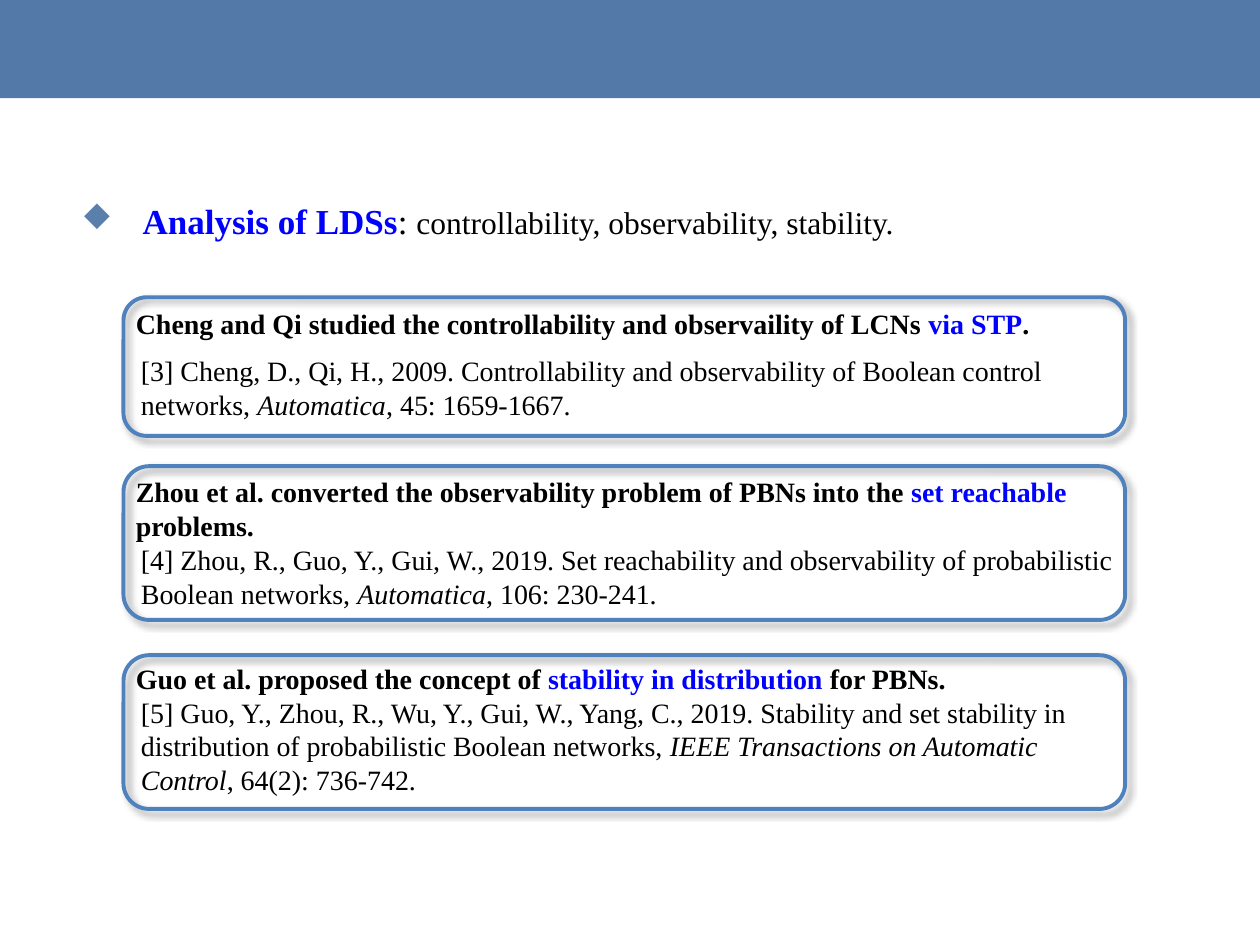
"""Build a slide on the analysis of logical dynamic systems with three framed citations."""
from lxml import etree
from pptx import Presentation, util as u
from pptx.dml.color import RGBColor
from pptx.enum import shapes, text
from pptx.oxml import parse_xml
from pptx.oxml.ns import nsdecls, qn

BAND = RGBColor(0x52, 0x79, 0xA7)
FRAME = RGBColor(0x4F, 0x81, 0xBD)
ACCENT = RGBColor(0x00, 0x00, 0xFF)
BLACK = RGBColor(0x00, 0x00, 0x00)
BULLET = "5B7FAB"
FRAME_LEFT, FRAME_WIDTH = 0.98, 7.95
REFERENCE_LEFT = 1.02

SHADOW = f"""<a:effectLst {nsdecls("a")}>
  <a:outerShdw blurRad="50800" dist="38100" dir="2700000" algn="tl" rotWithShape="0">
    <a:srgbClr val="000000"><a:alpha val="40000"/></a:srgbClr>
  </a:outerShdw>
</a:effectLst>"""

CITATIONS = [
    dict(
        top=2.36, height=1.1, heading_top=2.38, reference_top=2.76,
        heading=("Cheng and Qi studied the controllability and observaility of LCNs ",
                 "via STP", "."),
        reference=("[3] Cheng, D., Qi, H., 2009. Controllability and observability of "
                   "Boolean control networks, ", "Automatica", ", 45: 1659-1667."),
    ),
    dict(
        top=3.7, height=1.22, heading_top=3.72, reference_top=4.26,
        heading=("Zhou et al. converted the observability problem of PBNs into the ",
                 "set reachable", " problems."),
        reference=("[4] Zhou, R., Guo, Y., Gui, W., 2019. Set reachability and observability "
                   "of probabilistic Boolean networks, ", "Automatica", ", 106: 230-241."),
    ),
    dict(
        top=5.2, height=1.22, heading_top=5.2, reference_top=5.47,
        heading=("Guo et al. proposed the concept of ",
                 "stability in distribution", " for PBNs."),
        reference=("[5] Guo, Y., Zhou, R., Wu, Y., Gui, W., Yang, C., 2019. Stability and set "
                   "stability in distribution of probabilistic Boolean networks, ",
                   "IEEE Transactions on Automatic Control", ", 64(2): 736-742."),
    ),
]


def add_span(para, words, size=16, color=BLACK, bold=False, italic=False):
    """Append one formatted span to a paragraph."""
    span = para.add_run()
    span.text = words
    font = span.font
    font.name = "Times New Roman"
    font.size = u.Pt(size)
    font.color.rgb = color
    font.bold = bold
    font.italic = italic


class SlideBuilder:
    """Holds the style and the current page."""

    def __init__(self, page):
        self.page = page

    def band(self, height):
        """Draw the coloured band across the top."""
        band = self.page.shapes.add_shape(
            shapes.MSO_SHAPE.RECTANGLE, 0, 0, u.Inches(10), u.Inches(height))
        band.shadow.inherit = False
        band.fill.solid()
        band.fill.fore_color.rgb = BAND
        band.line.fill.background()

    def text_box(self, parent, left, top, width, height):
        """Add a wrapping text box and return its first paragraph."""
        box = parent.shapes.add_textbox(*map(u.Inches, (left, top, width, height)))
        box.text_frame.word_wrap = True
        box.text_frame.auto_size = text.MSO_AUTO_SIZE.NONE
        return box.text_frame.paragraphs[0]

    def topic(self, title, details):
        """Add the bulleted topic line."""
        para = self.text_box(self.page, 0.57, 1.42, 8.87, 1.35)
        para.line_spacing = 1.15
        properties = para._p.get_or_add_pPr()
        properties.set("marL", str(u.Inches(0.38)))
        properties.set("indent", str(-u.Inches(0.38)))
        color = etree.SubElement(properties, qn("a:buClr"))
        etree.SubElement(color, qn("a:srgbClr"), val=BULLET)
        etree.SubElement(properties, qn("a:buSzPct"), val="80000")
        etree.SubElement(properties, qn("a:buChar"), char="◆")
        add_span(para, " ", size=24)
        add_span(para, title, size=20, color=ACCENT, bold=True)
        add_span(para, ": ", size=20)
        add_span(para, details, size=18)

    def frame(self, parent, top, height):
        """Draw a rounded outline with a soft shadow."""
        frame = parent.shapes.add_shape(
            shapes.MSO_SHAPE.ROUNDED_RECTANGLE,
            *map(u.Inches, (FRAME_LEFT, top, FRAME_WIDTH, height)))
        frame.fill.background()
        frame.line.color.rgb = FRAME
        frame.line.width = u.Pt(2.25)
        frame._element.spPr.append(parse_xml(SHADOW))

    def citation(self, top, height, heading_top, reference_top, heading, reference):
        """Add a grouped finding, its reference and their frame."""
        group = self.page.shapes.add_group_shape()
        para = self.text_box(group, FRAME_LEFT, heading_top, FRAME_WIDTH,
                             reference_top - heading_top)
        for words, color in zip(heading, (BLACK, ACCENT, BLACK)):
            add_span(para, words, color=color, bold=True)
        para = self.text_box(group, REFERENCE_LEFT, reference_top, FRAME_WIDTH, 0.91)
        for words, italic in zip(reference, (False, True, False)):
            add_span(para, words, italic=italic)
        self.frame(group, top, height)


def main():
    """Create the deck and save it."""
    deck = Presentation()
    deck.slide_width, deck.slide_height = u.Inches(10), u.Inches(7.5)
    builder = SlideBuilder(deck.slides.add_slide(deck.slide_layouts[6]))
    builder.band(0.78)
    builder.topic("Analysis of LDSs", "controllability, observability, stability.")
    for citation in CITATIONS:
        builder.citation(**citation)
    deck.save("out.pptx")


if __name__ == "__main__":
    main()
